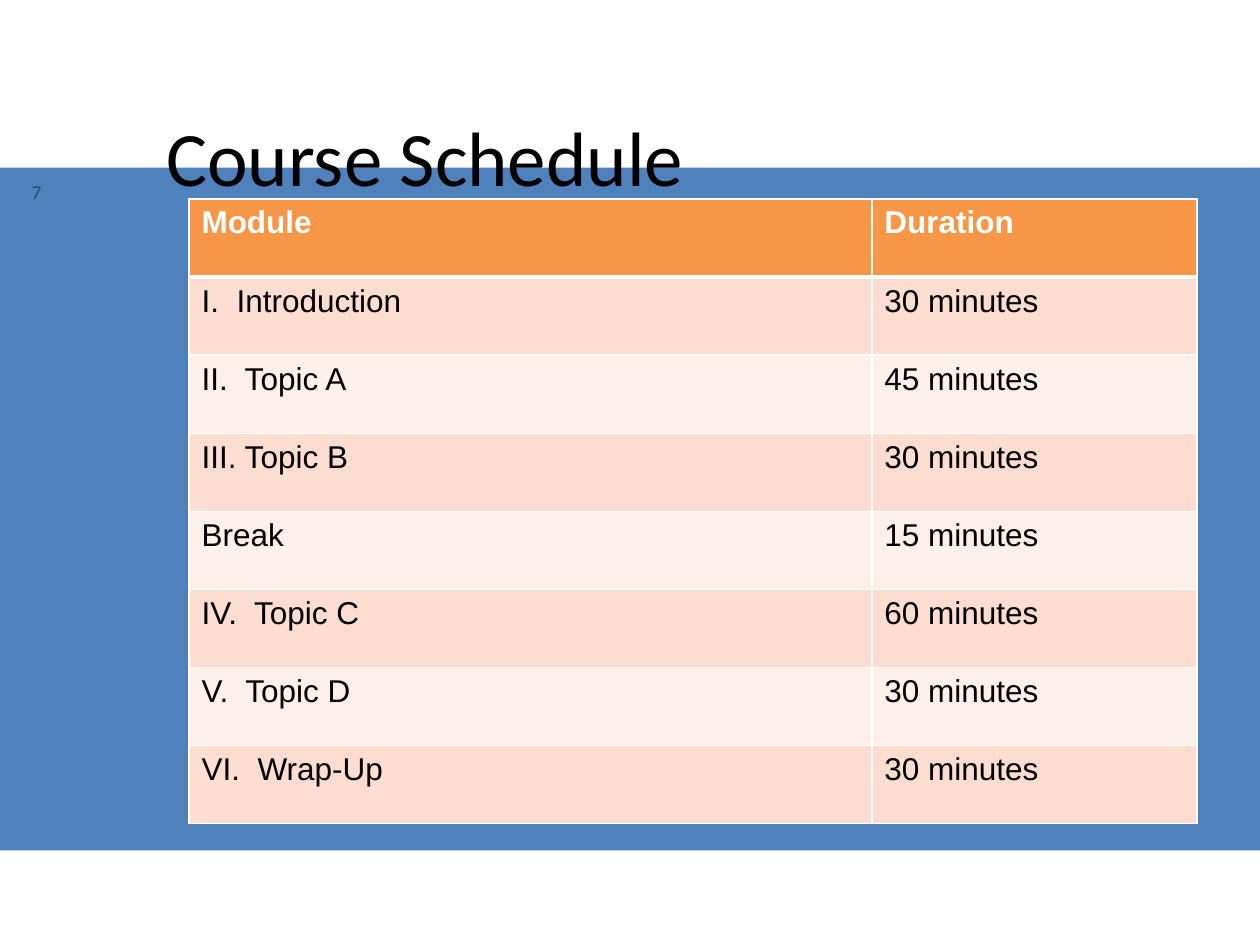
from dataclasses import dataclass
from typing import NamedTuple

from lxml import etree
from pptx import Presentation
from pptx.dml.color import RGBColor
from pptx.enum.shapes import MSO_SHAPE
from pptx.enum.text import MSO_ANCHOR, PP_ALIGN
from pptx.oxml.ns import qn
from pptx.util import Inches, Pt

RECTANGLE = MSO_SHAPE.RECTANGLE
MIDDLE = MSO_ANCHOR.MIDDLE
LEFT, CENTER = PP_ALIGN.LEFT, PP_ALIGN.CENTER
TITLE_ONLY = 5


@dataclass(frozen=True)
class Theme:
    band: str = "4F81BD"
    header: str = "F79646"
    row_tints: tuple = ("FCDDCF", "FDEFE9")
    text: str = "000000"
    light: str = "FFFFFF"
    number: str = "1F497D"
    heading_font: str = "Calibri"
    table_font: str = "Arial"
    title_size: float = 44
    table_size: float = 18
    number_size: float = 11.1
    border: float = 1
    header_border: float = 3


class Box(NamedTuple):
    left: float
    top: float
    width: float
    height: float

    def lengths(self) -> tuple:
        return tuple(Inches(value) for value in self)


class Module(NamedTuple):
    name: str
    duration: str


THEME = Theme()
BAND_BOX = Box(0, 1.33, 10, 5.42)
TITLE_BOX = Box(1.22, 0.72, 8.45, 1.03)
TABLE_BOX = Box(1.5, 1.58, 8, 4.96)
NUMBER_BOX = Box(0, 1.39, 0.58, 0.27)
COLUMN_WIDTHS = (5.42, 2.58)
SCHEDULE = (
    Module("Module", "Duration"),
    Module("I.  Introduction", "30 minutes"),
    Module("II.  Topic A", "45 minutes"),
    Module("III. Topic B", "30 minutes"),
    Module("Break", "15 minutes"),
    Module("IV.  Topic C", "60 minutes"),
    Module("V.  Topic D", "30 minutes"),
    Module("VI.  Wrap-Up", "30 minutes"),
)


def set_fill(target, color: str) -> None:
    target.fill.solid()
    target.fill.fore_color.rgb = RGBColor.from_string(color)


def write(text_frame, text: str, color: str, alignment=LEFT, **format_values) -> None:
    paragraph = text_frame.paragraphs[0]
    paragraph.alignment = alignment
    run = paragraph.add_run()
    run.text = text
    run.font.color.rgb = RGBColor.from_string(color)
    for attribute, value in format_values.items():
        setattr(run.font, attribute, value)


def set_borders(cell, bottom_width: float, top_width: float) -> None:
    properties = cell._tc.get_or_add_tcPr()
    widths = {"lnL": THEME.border, "lnR": THEME.border, "lnT": top_width, "lnB": bottom_width}
    for index, (side, width) in enumerate(widths.items()):
        line = etree.Element(qn(f"a:{side}"), w=str(Pt(width)))
        fill = etree.SubElement(line, qn("a:solidFill"))
        etree.SubElement(fill, qn("a:srgbClr"), val=THEME.light)
        properties.insert(index, line)


def add_band(slide, box: Box) -> None:
    band = slide.shapes.add_shape(RECTANGLE, *box.lengths())
    band.shadow.inherit = False
    set_fill(band, THEME.band)
    band.line.fill.background()
    # Send the band behind the title
    slide.shapes._spTree.insert(2, band._element)


def set_title(slide, text: str, box: Box) -> None:
    title = slide.shapes.title
    title.left, title.top, title.width, title.height = box.lengths()
    title.text_frame.vertical_anchor = MIDDLE
    write(title.text_frame, text, THEME.text,
          name=THEME.heading_font, size=Pt(THEME.title_size))


def add_schedule(slide, modules: tuple, box: Box) -> None:
    table = slide.shapes.add_table(len(modules), len(COLUMN_WIDTHS), *box.lengths()).table
    for column, width in zip(table.columns, COLUMN_WIDTHS):
        column.width = Inches(width)
    for row_index, module in enumerate(modules):
        table.rows[row_index].height = Inches(box.height / len(modules))
        is_header = row_index == 0
        fill = THEME.header if is_header else THEME.row_tints[(row_index - 1) % 2]
        color = THEME.light if is_header else THEME.text
        bottom_width = THEME.header_border if is_header else THEME.border
        top_width = THEME.header_border if row_index == 1 else THEME.border
        for column_index, text in enumerate(module):
            cell = table.cell(row_index, column_index)
            set_fill(cell, fill)
            set_borders(cell, bottom_width, top_width)
            write(cell.text_frame, text, color, name=THEME.table_font,
                  size=Pt(THEME.table_size), bold=is_header)


def add_number(slide, text: str, box: Box) -> None:
    text_frame = slide.shapes.add_textbox(*box.lengths()).text_frame
    text_frame.word_wrap = True
    text_frame.vertical_anchor = MIDDLE
    write(text_frame, text, THEME.number, CENTER,
          name=THEME.heading_font, size=Pt(THEME.number_size))


def main() -> None:
    presentation = Presentation()
    presentation.slide_width = Inches(10)
    presentation.slide_height = Inches(7.5)
    slide = presentation.slides.add_slide(presentation.slide_layouts[TITLE_ONLY])
    set_fill(slide.background, THEME.light)

    # Background band and title
    add_band(slide, BAND_BOX)
    set_title(slide, "Course Schedule", TITLE_BOX)

    # Schedule table and slide number
    add_schedule(slide, SCHEDULE, TABLE_BOX)
    add_number(slide, "7", NUMBER_BOX)

    presentation.save("out.pptx")


if __name__ == "__main__":
    main()
